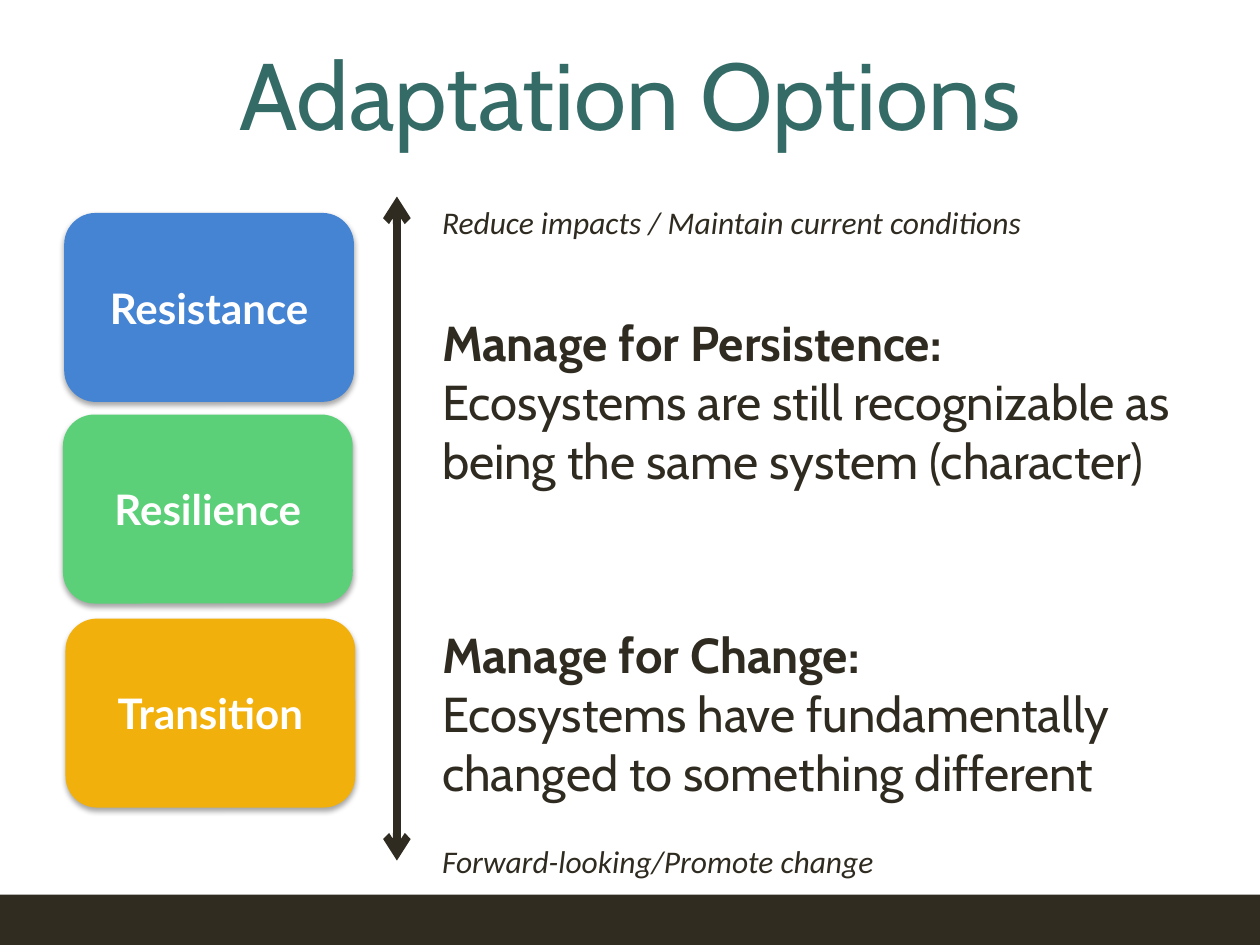
from dataclasses import dataclass

from lxml import etree
from pptx import Presentation
from pptx.dml.color import RGBColor
from pptx.enum.shapes import MSO_CONNECTOR, MSO_SHAPE
from pptx.enum.text import MSO_ANCHOR, PP_ALIGN
from pptx.oxml import parse_xml
from pptx.oxml.ns import nsdecls, qn
from pptx.util import Inches, Pt

RECT, ROUNDED = MSO_SHAPE.RECTANGLE, MSO_SHAPE.ROUNDED_RECTANGLE
STRAIGHT = MSO_CONNECTOR.STRAIGHT
LEFT, CENTER = PP_ALIGN.LEFT, PP_ALIGN.CENTER
TOP, MIDDLE = MSO_ANCHOR.TOP, MSO_ANCHOR.MIDDLE

WIDTH, HEIGHT = Inches(10), Inches(7.5)
COLUMNS, ROWS = 100, 75


@dataclass(frozen=True)
class Theme:
    ink: str = "2F2B20"
    footer: str = "302C20"
    teal: str = "356B67"
    white: str = "FFFFFF"
    blue: str = "4584D3"
    green: str = "5BD078"
    amber: str = "F2B00C"
    heading_font: str = "Cabin"
    label_font: str = "Lato"
    note_font: str = "Calibri"
    title_size: int = 54
    body_size: int = 28
    label_size: int = 24
    note_size: int = 18
    axis_width: float = 4.5


class SlideBuilder:
    """Draws on one slide, with lengths in grid columns and rows."""

    def __init__(self, slide, theme):
        self.shapes = slide.shapes
        self.theme = theme

    def place(self, column, row, columns, rows):
        x, y = WIDTH / COLUMNS, HEIGHT / ROWS
        return [round(n) for n in (column * x, row * y, columns * x, rows * y)]

    def add_lines(self, shape, lines, font, size, color, align=LEFT, anchor=TOP):
        """Fill a shape with one paragraph per (text, bold, italic) line."""
        frame = shape.text_frame
        frame.word_wrap = True
        frame.vertical_anchor = anchor
        for index, (words, bold, italic) in enumerate(lines):
            paragraph = frame.add_paragraph() if index else frame.paragraphs[0]
            paragraph.alignment = align
            run = paragraph.add_run()
            run.text = words
            run.font.name = font
            run.font.size = Pt(size)
            run.font.bold = bold
            run.font.italic = italic
            run.font.color.rgb = RGBColor.from_string(color)

    def block(self, kind, area, color):
        shape = self.shapes.add_shape(kind, *self.place(*area))
        shape.shadow.inherit = False
        shape.fill.solid()
        shape.fill.fore_color.rgb = RGBColor.from_string(color)
        shape.line.fill.background()
        return shape

    def title(self, words, area):
        box = self.shapes.add_textbox(*self.place(*area))
        self.add_lines(box, [(words, False, False)], self.theme.heading_font,
                       self.theme.title_size, self.theme.teal, CENTER, MIDDLE)

    def option(self, name, area, color):
        card = self.block(ROUNDED, area, color)
        card.element.spPr.find(qn("a:effectLst")).append(parse_xml(
            f'<a:outerShdw {nsdecls("a")} blurRad="{Pt(3.1)}" dist="{Pt(1.8)}" '
            'dir="5400000" rotWithShape="0"><a:srgbClr val="000000">'
            '<a:alpha val="35000"/></a:srgbClr></a:outerShdw>'))
        self.add_lines(card, [(name, True, False)], self.theme.label_font,
                       self.theme.label_size, self.theme.white, CENTER, MIDDLE)

    def goal(self, heading, description, area):
        box = self.shapes.add_textbox(*self.place(*area))
        self.add_lines(box, [(heading, True, False), (description, False, False)],
                       self.theme.heading_font, self.theme.body_size, self.theme.ink)

    def note(self, words, area):
        box = self.shapes.add_textbox(*self.place(*area))
        self.add_lines(box, [(words, False, True)], self.theme.note_font,
                       self.theme.note_size, self.theme.ink)

    def axis(self, column, first_row, last_row):
        """Draw a vertical line with an arrowhead at each end."""
        x, top, _, bottom = self.place(column, first_row, 0, last_row)
        axis = self.shapes.add_connector(STRAIGHT, x, top, x, bottom)
        axis.line.color.rgb = RGBColor.from_string(self.theme.ink)
        axis.line.width = Pt(self.theme.axis_width)
        properties = axis.element.spPr
        for end in ("a:headEnd", "a:tailEnd"):
            etree.SubElement(properties.find(qn("a:ln")), qn(end), type="arrow")
        etree.SubElement(properties, qn("a:effectLst"))


def main():
    deck = Presentation()
    deck.slide_width, deck.slide_height = WIDTH, HEIGHT
    theme = Theme()
    builder = SlideBuilder(deck.slides.add_slide(deck.slide_layouts[6]), theme)

    builder.block(RECT, (0, 71, COLUMNS, 4), theme.footer)
    builder.title("Adaptation Options", (6.9, 0.1, 86.2, 14.5))

    for name, column, row, color in (
        ("Resistance", 5.1, 16.9, theme.blue),
        ("Resilience", 5, 32.9, theme.green),
        ("Transition", 5.2, 49.1, theme.amber),
    ):
        builder.option(name, (column, row, 23, 15), color)

    builder.axis(31.5, 15.6, 68.3)

    text_column = 34.1
    for heading, description, row in (
        ("Manage for Persistence:",
         "Ecosystems are still recognizable as being the same system (character)",
         24.3),
        ("Manage for Change:",
         "Ecosystems have fundamentally changed to something different", 49.1),
    ):
        builder.goal(heading, description, (text_column, row, 60.9, 15.1))

    for words, row in (
        ("Reduce impacts / Maintain current conditions", 15.6),
        ("Forward-looking/Promote change", 66.3),
    ):
        builder.note(words, (text_column, row, 56.1, 4))

    deck.save("out.pptx")


if __name__ == "__main__":
    main()
